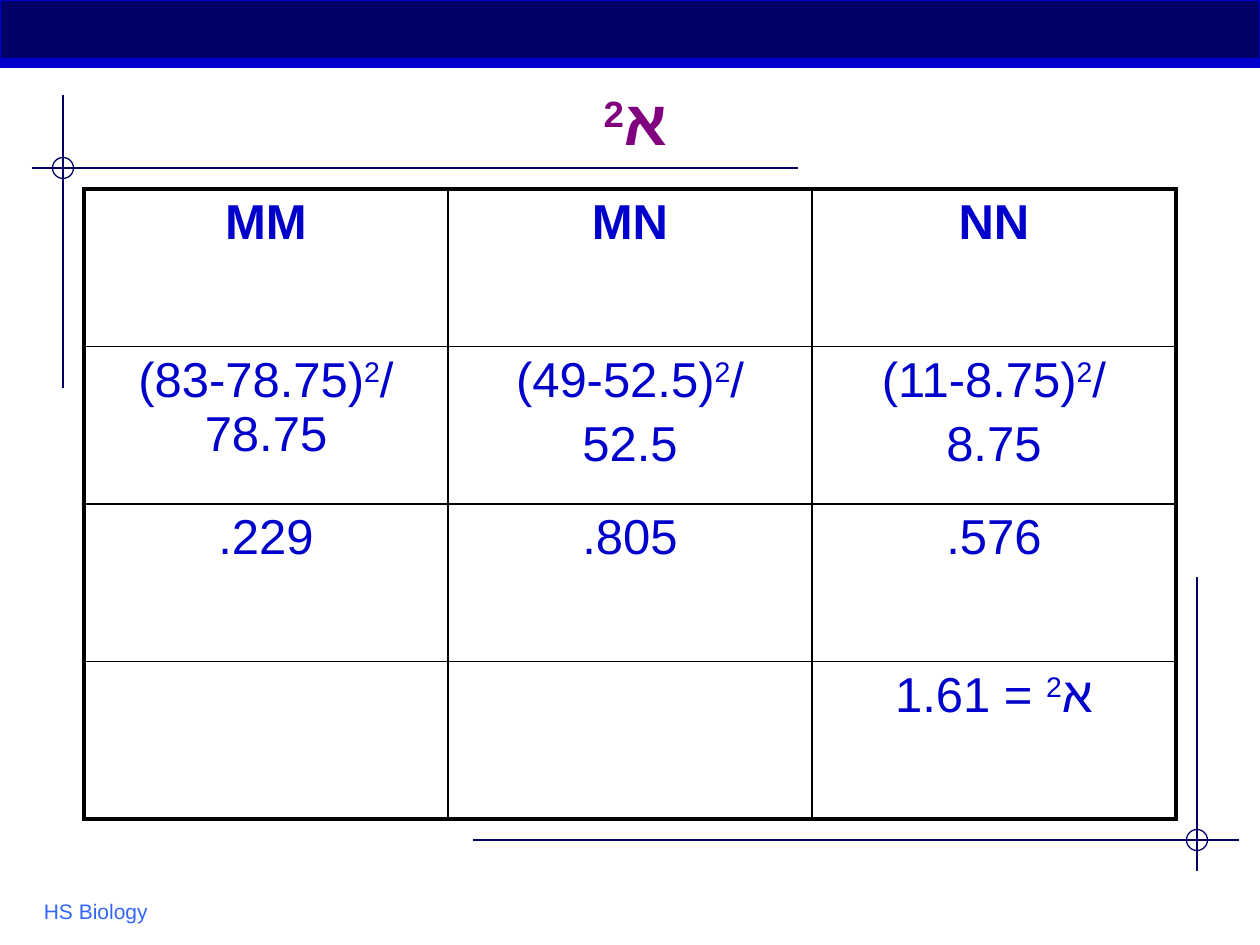
from pptx import Presentation
from pptx.dml.color import RGBColor as RGB
from pptx.enum.shapes import MSO_CONNECTOR as LINK, MSO_SHAPE as SHAPE
from pptx.enum.text import MSO_ANCHOR as ANCHOR, PP_ALIGN as ALIGN
from pptx.oxml.ns import qn
from pptx.util import Pt
from lxml.etree import SubElement as Sub

NAVY = RGB(0x00, 0x00, 0x66)
BLUE = RGB(0x00, 0x00, 0xCC)
SKY = RGB(0x33, 0x66, 0xFF)
PLUM = RGB(0x80, 0x00, 0x80)
BLACK = RGB(0x00, 0x00, 0x00)

HEAD = {"size": Pt(28), "name": "Arial", "bold": True}
BODY = HEAD | {"bold": False}
TITLE = HEAD | {"size": Pt(36)}
FOOT = BODY | {"size": Pt(12)}

ROWS = [
    [[["MM"]], [["MN"]], [["NN"]]],
    [
        [["(83-78.75)", "2", "/ 78.75"]],
        [["(49-52.5)", "2", "/"], ["52.5"]],
        [["(11-8.75)", "2", "/"], ["8.75"]],
    ],
    [[[".229"]], [[".805"]], [[".576"]]],
    [[], [], [["א", "2", " = 1.61"]]],
]


def write(frame, paras, style, color, align):
    """Fill a text frame; the second run of each paragraph is raised."""
    for i, parts in enumerate(paras):
        para = frame.add_paragraph() if i else frame.paragraphs[0]
        para.alignment = align
        para.space_before = Pt(5.6 if i else 0)
        for j, text in enumerate(parts):
            run = para.add_run()
            run.text = text
            for key, value in style.items():
                setattr(run.font, key, value)
            run.font.color.rgb = color
            props = run._r.get_or_add_rPr()
            Sub(props, qn("a:cs"), typeface=style["name"])
            if j == 1:
                props.set("baseline", "30000")


def place(shape, box):
    """Move and size a shape to a box in points."""
    shape.left, shape.top, shape.width, shape.height = map(Pt, box)


def rule(slide, ends, color, width):
    """Draw a plain straight line between two points."""
    line = slide.shapes.add_connector(LINK.STRAIGHT, *map(Pt, ends))
    line.line.color.rgb = color
    line.line.width = Pt(width)
    Sub(line._element.spPr, qn("a:effectLst"))


def cross(slide, x, y, left, top, right, bottom):
    """Draw two crossing lines with a ring where they meet."""
    rule(slide, (x, top, x, bottom), NAVY, 0.75)
    rule(slide, (left, y, right, y), NAVY, 0.75)
    ring = slide.shapes.add_shape(
        SHAPE.FLOWCHART_CONNECTOR, Pt(x - 6), Pt(y - 6), Pt(12), Pt(12))
    ring.shadow.inherit = False
    ring.fill.background()
    ring.line.color.rgb = NAVY
    ring.line.width = Pt(0.75)


def edge(cell, color, widths):
    """Set the left, right, top and bottom borders of a cell."""
    props = cell._tc.get_or_add_tcPr()
    for i, (side, width) in enumerate(zip("LRTB", widths)):
        line = Sub(props, qn(f"a:ln{side}"), w=str(Pt(width)))
        Sub(Sub(line, qn("a:solidFill")), qn("a:srgbClr"), val=str(color))
        props.insert(i, line)


def grid(slide, rows, cols, box):
    """Add an unstyled table that fills a box evenly."""
    table = slide.shapes.add_table(rows, cols, *map(Pt, box)).table
    table.first_row = table.horz_banding = False
    return table


def banner(slide, box):
    """Draw the dark band and the bright rule along its lower edge."""
    left, top, width, height = box
    cell = grid(slide, 1, 1, box).cell(0, 0)
    cell.fill.solid()
    cell.fill.fore_color.rgb = NAVY
    edge(cell, BLUE, [1] * 4)
    low = top + height
    rule(slide, (left, low, left + width, low), BLUE, 6)


def title(slide, box):
    """Place and format the title."""
    head = slide.shapes.title
    place(head, box)
    head.text_frame.vertical_anchor = ANCHOR.MIDDLE
    write(head.text_frame, [["א", "2"]], TITLE, PLUM, ALIGN.CENTER)


def sums(slide, box):
    """Build the chi-square table with a heavy outer frame."""
    rows, cols = len(ROWS), len(ROWS[0])
    table = grid(slide, rows, cols, box)
    for r, row in enumerate(ROWS):
        for c, paras in enumerate(row):
            cell = table.cell(r, c)
            cell.fill.background()
            outer = (c == 0, c == cols - 1, r == 0, r == rows - 1)
            edge(cell, BLACK, [2.25 if out else 1 for out in outer])
            write(cell.text_frame, paras, BODY if r else HEAD, BLUE,
                  ALIGN.CENTER)


def footer(slide, box):
    """Write the course name at the bottom left."""
    note = slide.shapes.add_textbox(*map(Pt, box))
    note.text_frame.word_wrap = True
    write(note.text_frame, [["HS Biology"]], FOOT, SKY, ALIGN.LEFT)


def main():
    """Build and save the slide."""
    deck = Presentation()
    deck.slide_width, deck.slide_height = Pt(720), Pt(540)
    slide = deck.slides.add_slide(deck.slide_layouts[5])
    banner(slide, (0, 0, 720, 36))
    cross(slide, 36, 96, 18, 54, 456, 222)
    cross(slide, 684, 480, 270, 330, 708, 498)
    footer(slide, (18, 510, 150, 18))
    title(slide, (18, 42, 690, 54))
    sums(slide, (48, 108, 624, 360))
    deck.save("out.pptx")


if __name__ == "__main__":
    main()
